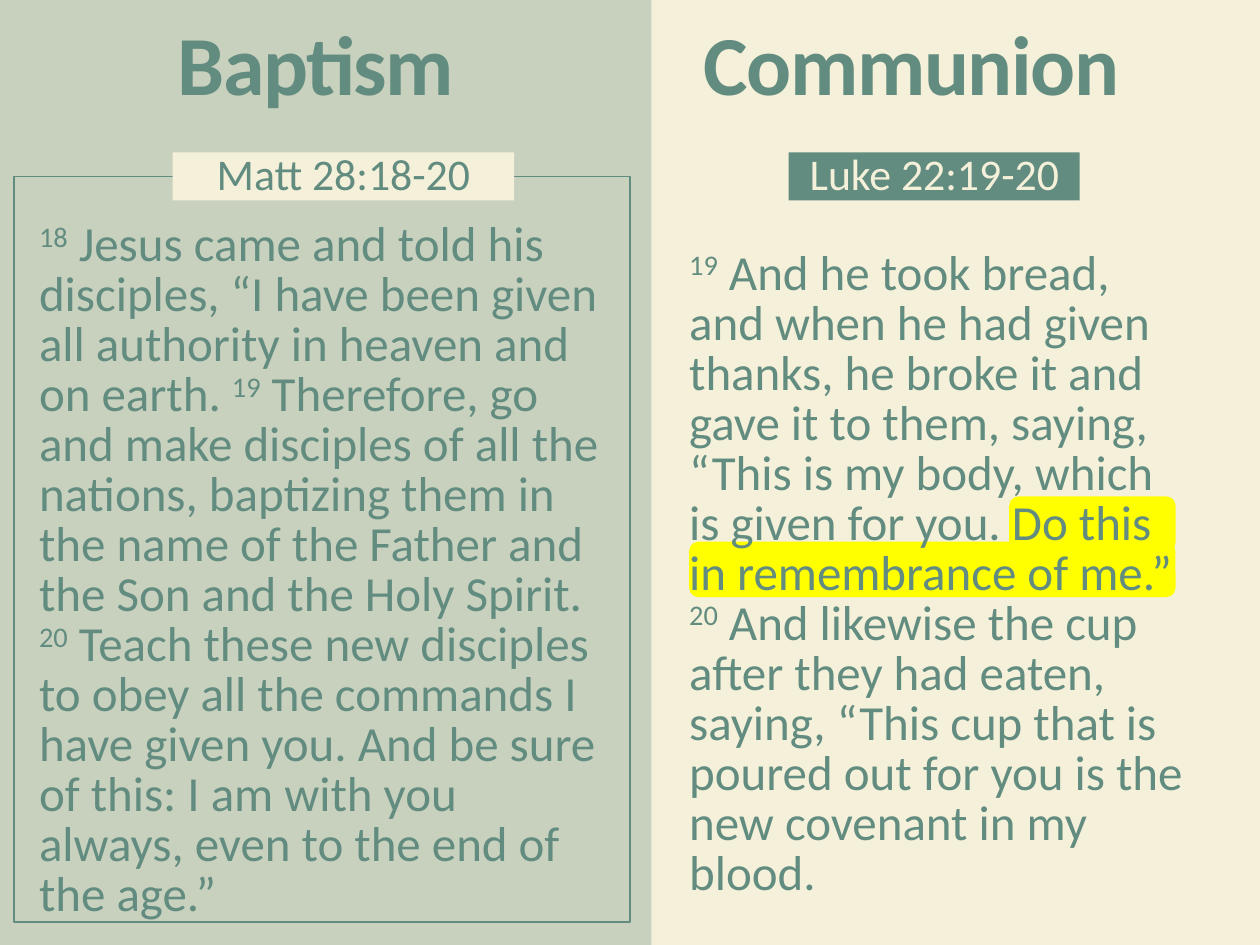
from dataclasses import dataclass

from lxml import etree
from pptx import Presentation, util as u
from pptx.dml.color import RGBColor
from pptx.enum import shapes, text
from pptx.oxml import ns


@dataclass(frozen=True)
class Theme:
    font: str = "Calibri"
    green: str = "638C80"
    cream: str = "F4F0D9"
    yellow: str = "FFFF00"
    title: int = 48
    label: int = 25
    body: int = 28
    tight: float = 0.85
    normal: float = 0.9


THEME = Theme()
WIDTH, HEIGHT = u.Inches(10), u.Inches(7.5)
RECTANGLE = shapes.MSO_SHAPE.RECTANGLE
ROUNDED = shapes.MSO_SHAPE.ROUNDED_RECTANGLE

LABEL_TOP, LABEL_HEIGHT = 16.13, 5.07
TITLE_TOP, TITLE_WIDTH, TITLE_HEIGHT = 2.4, 39.7, 9.73
PANEL = (0, 0, 51.7, 100)
FRAME = (1.1, 18.67, 48.9, 78.93)
HIGHLIGHT_RIGHT, HIGHLIGHT_HEIGHT = 93.3, 5.87
HIGHLIGHTS = [(80.1, 52.53), (54.7, 57.33)]

COLUMNS = [
    {
        "title": "Baptism", "title_left": 5.2,
        "label": "Matt 28:18-20", "label_left": 13.7, "label_width": 27.1,
        "label_fill": THEME.cream, "label_color": THEME.green,
        "body_area": (3.1, 23.47, 44.8, 74.8),
        "verses": [
            [
                ("18", " Jesus came and told his disciples, “I have been given all "
                       "authority in heaven and on earth. "),
                ("19", " Therefore, go and make disciples of all the nations, baptizing "
                       "them in the name of the Father and the Son and the Holy Spirit."),
            ],
            [
                ("20", " Teach these new disciples to obey all the commands I have given "
                       "you. And be sure of this: I am with you always, even to the end "
                       "of the age.”"),
            ],
        ],
    },
    {
        "title": "Communion", "title_left": 52.5,
        "label": "Luke 22:19-20", "label_left": 62.6, "label_width": 23.1,
        "label_fill": THEME.green, "label_color": THEME.cream,
        "body_area": (54.7, 26.53, 39.7, 69.47),
        "verses": [
            [
                ("19", " And he took bread, and when he had given thanks, he broke it and "
                       "gave it to them, saying, “This is my body, which is given for you. "
                       "Do this in remembrance of me.” "),
                ("20", " And likewise the cup after they had eaten, saying, “This cup that "
                       "is poured out for you is the new covenant in my blood."),
            ],
        ],
    },
]


def place(left, top, width, height):
    return [int(size * share / 100) for size, share in
            zip((WIDTH, HEIGHT, WIDTH, HEIGHT), (left, top, width, height))]


def add_box(parent, area, kind=RECTANGLE, fill=None, line=None, opacity=None):
    shape = parent.add_shape(kind, *place(*area))
    shape.shadow.inherit = False
    if fill:
        shape.fill.solid()
        shape.fill.fore_color.rgb = RGBColor.from_string(fill)
    else:
        shape.fill.background()
    if opacity is not None:
        color = shape._element.spPr.find(".//" + ns.qn("a:srgbClr"))
        etree.SubElement(color, ns.qn("a:alpha"), val=str(opacity * 1000))
    if line:
        shape.line.color.rgb = RGBColor.from_string(line)
        shape.line.width = u.Pt(1)
    else:
        shape.line.fill.background()
    return shape


def write(shape, paragraphs, size, color=THEME.green, bold=False, spacing=THEME.normal,
          align=text.PP_ALIGN.CENTER, tracking=None):
    frame = shape.text_frame
    frame.word_wrap = True
    frame.auto_size = text.MSO_AUTO_SIZE.SHAPE_TO_FIT_TEXT
    frame.margin_left = frame.margin_right = frame.margin_top = frame.margin_bottom = 0
    for index, verses in enumerate(paragraphs):
        paragraph = frame.add_paragraph() if index else frame.paragraphs[0]
        paragraph.alignment = align
        paragraph.line_spacing = spacing
        for number, words in verses:
            for content, raised in ((number, True), (words, False)):
                if not content:
                    continue
                run = paragraph.add_run()
                run.text = content
                run.font.name = THEME.font
                run.font.size = u.Pt(size)
                run.font.bold = bold
                run.font.color.rgb = RGBColor.from_string(color)
                properties = run._r.get_or_add_rPr()
                if raised:
                    properties.set("baseline", "30000")
                if tracking is not None:
                    properties.set("spc", str(int(tracking * 100)))


def main():
    presentation = Presentation()
    presentation.slide_width, presentation.slide_height = WIDTH, HEIGHT
    slide = presentation.slides.add_slide(presentation.slide_layouts[6])
    slide.background.fill.solid()
    slide.background.fill.fore_color.rgb = RGBColor.from_string(THEME.cream)

    add_box(slide.shapes, PANEL, fill=THEME.green, opacity=30)
    highlight = slide.shapes.add_group_shape()
    for left, top in HIGHLIGHTS:
        area = (left, top, HIGHLIGHT_RIGHT - left, HIGHLIGHT_HEIGHT)
        add_box(highlight.shapes, area, kind=ROUNDED, fill=THEME.yellow)
    add_box(slide.shapes, FRAME, line=THEME.green)

    for column in COLUMNS:
        body = slide.shapes.add_textbox(*place(*column["body_area"]))
        write(body, column["verses"], THEME.body, spacing=THEME.tight,
              align=text.PP_ALIGN.LEFT)
        label = add_box(slide.shapes, (column["label_left"], LABEL_TOP,
                                       column["label_width"], LABEL_HEIGHT),
                        fill=column["label_fill"])
        write(label, [[("", column["label"])]], THEME.label, color=column["label_color"])
        title = slide.shapes.add_textbox(*place(column["title_left"], TITLE_TOP,
                                                TITLE_WIDTH, TITLE_HEIGHT))
        write(title, [[("", column["title"])]], THEME.title, bold=True, tracking=-0.8)

    presentation.save("out.pptx")


if __name__ == "__main__":
    main()
